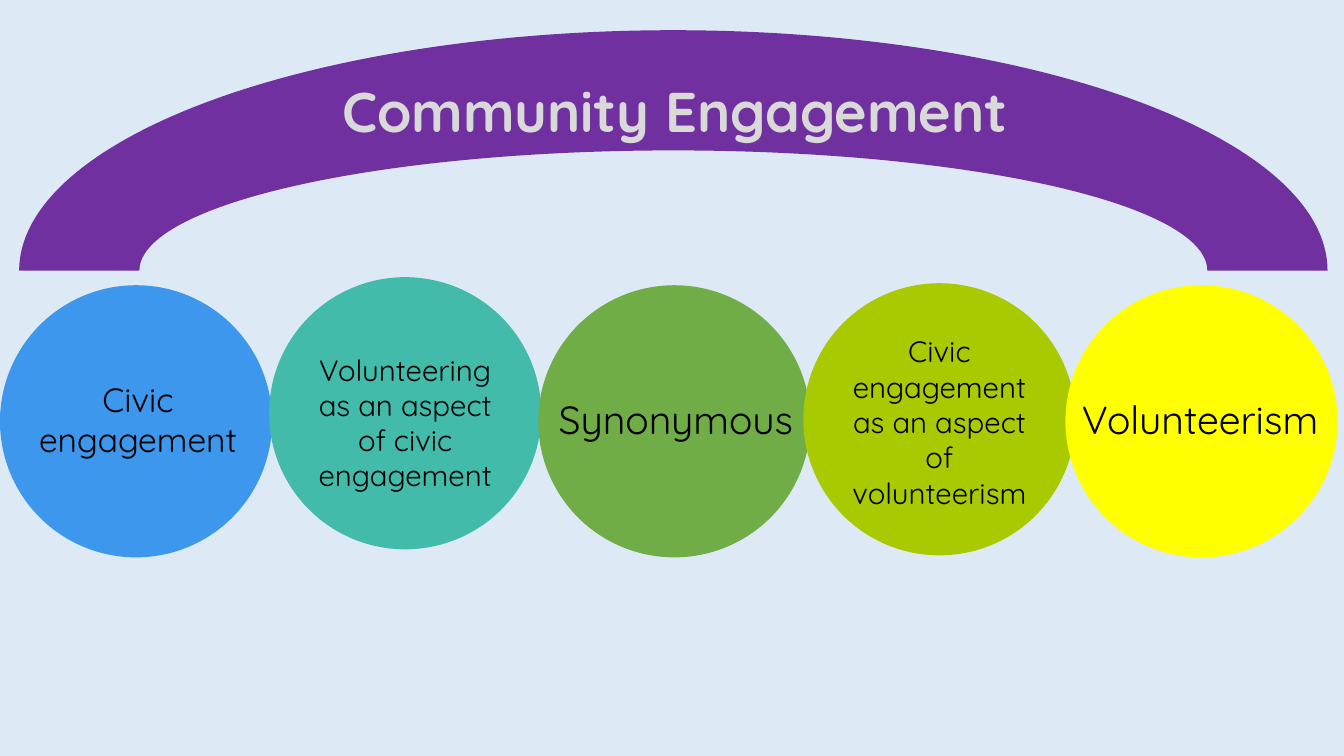
from dataclasses import dataclass

import pptx
import pptx.dml.color
import pptx.enum.shapes
import pptx.enum.text
import pptx.shapes.autoshape
import pptx.slide
import pptx.text.text
import pptx.util

Pt = pptx.util.Pt
RGB = pptx.dml.color.RGBColor
MSO_SHAPE = pptx.enum.shapes.MSO_SHAPE
DIAMETER = 194.4


@dataclass(frozen=True)
class Theme:
    font: str = "Quicksand"
    background: str = "DDEAF6"
    arc: str = "7030A0"
    title: str = "D9D9D9"
    text: str = "000000"
    title_size: int = 40
    large: int = 28
    medium: int = 24
    small: int = 21


@dataclass(frozen=True)
class Box:
    left: float
    top: float
    width: float
    height: float

    def lengths(self) -> tuple[pptx.util.Length, ...]:
        return Pt(self.left), Pt(self.top), Pt(self.width), Pt(self.height)


@dataclass(frozen=True)
class Stage:
    text: str
    left: float
    top: float
    fill: str
    size: int
    label: Box


THEME = Theme()
STAGES = [
    Stage("Civic engagement", 0, 203.76, "3D98ED", THEME.medium,
          Box(5.04, 267.12, 187.2, 65.52)),
    Stage("Volunteering as an aspect of civic engagement", 192.24, 198, "42BBAB",
          THEME.small, Box(213.84, 247.68, 151.2, 108.72)),
    Stage("Synonymous", 384.48, 203.76, "70AD47", THEME.large,
          Box(386.64, 278.64, 192.24, 41.04)),
    Stage("Civic engagement as an aspect of volunteerism", 573.84, 202.32, "A9CA00",
          THEME.small, Box(595.44, 234.72, 151.2, 134.64)),
    Stage("Volunteerism", 761.04, 203.76, "FFFF00", THEME.large,
          Box(761.04, 278.64, 192.24, 41.04)),
]
ARC = Box(13.68, 21.6, 934.56, 343.44)
TITLE = Box(217.44, 51.12, 529.2, 55.44)


def add_filled(slide: pptx.slide.Slide, kind: MSO_SHAPE, box: Box,
               color: str) -> pptx.shapes.autoshape.Shape:
    sp = slide.shapes.add_shape(kind, *box.lengths())
    sp.shadow.inherit = False
    sp.fill.solid()
    sp.fill.fore_color.rgb = RGB.from_string(color)
    sp.line.fill.background()
    return sp


def write(tf: pptx.text.text.TextFrame, text: str, size: int, color: str,
          bold: bool = False) -> None:
    tf.text = text
    tf.word_wrap = True
    tf.auto_size = pptx.enum.text.MSO_AUTO_SIZE.NONE
    tf.vertical_anchor = pptx.enum.text.MSO_ANCHOR.TOP
    p = tf.paragraphs[0]
    p.alignment = pptx.enum.text.PP_ALIGN.CENTER
    p.font.name = THEME.font
    p.font.size = Pt(size)
    p.font.bold = bold
    p.font.color.rgb = RGB.from_string(color)


def add_stage(slide: pptx.slide.Slide, stage: Stage) -> None:
    circle = Box(stage.left, stage.top, DIAMETER, DIAMETER)
    add_filled(slide, MSO_SHAPE.OVAL, circle, stage.fill)
    label = slide.shapes.add_textbox(*stage.label.lengths())
    write(label.text_frame, stage.text, stage.size, THEME.text)


def add_heading(slide: pptx.slide.Slide) -> None:
    arc = add_filled(slide, MSO_SHAPE.BLOCK_ARC, ARC, THEME.arc)
    title = slide.shapes.title
    title.left, title.top, title.width, title.height = TITLE.lengths()
    write(title.text_frame, "Community Engagement", THEME.title_size, THEME.title, True)
    arc.element.addnext(title.element)


def main() -> None:
    prs = pptx.Presentation()
    prs.slide_width, prs.slide_height = Pt(960), Pt(540)
    slide = prs.slides.add_slide(prs.slide_layouts.get_by_name("Title Only"))
    slide.background.fill.solid()
    slide.background.fill.fore_color.rgb = RGB.from_string(THEME.background)
    for stage in STAGES:
        add_stage(slide, stage)
    add_heading(slide)
    prs.save("out.pptx")


if __name__ == "__main__":
    main()
